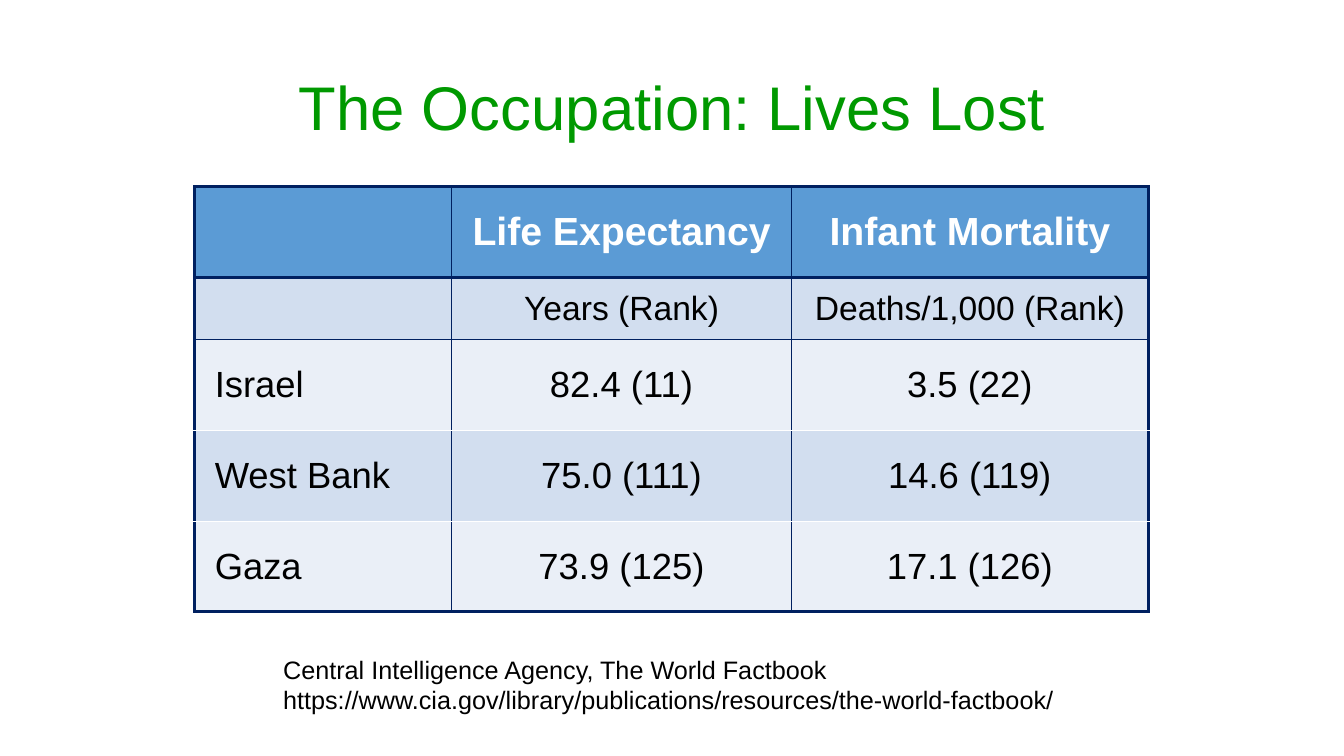
from lxml.etree import SubElement
from pptx import Presentation
from pptx.dml.color import RGBColor
from pptx.enum.text import MSO_ANCHOR as ANCHOR, PP_ALIGN as ALIGN
from pptx.oxml.ns import qn
from pptx.util import Inches, Pt

GREEN = RGBColor(0x00, 0x99, 0x00)
NAVY = RGBColor(0x00, 0x20, 0x60)
BLUE = RGBColor(0x5B, 0x9B, 0xD5)
BAND_DARK = RGBColor(0xD2, 0xDE, 0xEF)
BAND_LIGHT = RGBColor(0xEA, 0xEF, 0xF7)
WHITE = RGBColor(0xFF, 0xFF, 0xFF)
BLACK = RGBColor(0x00, 0x00, 0x00)

ROWS = [
    ("", "Life Expectancy", "Infant Mortality"),
    ("", "Years (Rank)", "Deaths/1,000 (Rank)"),
    ("Israel", "82.4 (11)", "3.5 (22)"),
    ("West Bank", "75.0 (111)", "14.6 (119)"),
    ("Gaza", "73.9 (125)", "17.1 (126)"),
]
COL_WIDTHS = [2.55, 3.37, 3.54]
ROW_HEIGHTS = [0.9, 0.62, 0.9, 0.9, 0.9]
TEXT_SIZES = [28, 24, 26, 26, 26]
ROW_FILLS = [BLUE, BAND_DARK, BAND_LIGHT, BAND_DARK, BAND_LIGHT]
ROW_LINES = [(NAVY, 2.25), (NAVY, 2.25), (NAVY, 1), (WHITE, 1), (WHITE, 1), (NAVY, 2.25)]
COL_LINES = [(NAVY, 2.25), (NAVY, 1), (NAVY, 1), (NAVY, 2.25)]


def style_paragraph(p, size, color, align, bold=False):
    p.alignment = align
    p.font.name = "Arial"
    p.font.size = Pt(size)
    p.font.bold = bold
    p.font.color.rgb = color


def add_text(s, box, lines, size, color, align, anchor, wrap):
    tf = s.shapes.add_textbox(*map(Inches, box)).text_frame
    tf.word_wrap = wrap
    tf.vertical_anchor = anchor
    tf.text = "\n".join(lines)
    for p in tf.paragraphs:
        style_paragraph(p, size, color, align)
    return tf


def set_border(cell, side, color, width):
    ln = SubElement(cell._tc.get_or_add_tcPr(), qn(f"a:ln{side}"), w=str(Pt(width)))
    fill = SubElement(ln, qn("a:solidFill"))
    SubElement(fill, qn("a:srgbClr"), val=str(color))


def fill_cell(cell, row, col):
    borders = {"L": COL_LINES[col], "R": COL_LINES[col + 1],
               "T": ROW_LINES[row], "B": ROW_LINES[row + 1]}
    for side, (color, width) in borders.items():
        set_border(cell, side, color, width)
    cell.fill.solid()
    cell.fill.fore_color.rgb = ROW_FILLS[row]
    cell.vertical_anchor = ANCHOR.MIDDLE
    if col == 0:
        cell.margin_left = Inches(0.2)
    cell.text = ROWS[row][col]
    style_paragraph(cell.text_frame.paragraphs[0], TEXT_SIZES[row],
                    BLACK if row else WHITE,
                    ALIGN.CENTER if col else ALIGN.LEFT, bold=row == 0)


def add_rates_table(s):
    table = s.shapes.add_table(
        len(ROWS), len(COL_WIDTHS), Inches(1.93), Inches(1.85),
        Inches(sum(COL_WIDTHS)), Inches(sum(ROW_HEIGHTS))).table
    for column, width in zip(table.columns, COL_WIDTHS):
        column.width = Inches(width)
    for row, height in enumerate(ROW_HEIGHTS):
        table.rows[row].height = Inches(height)
        for col in range(len(COL_WIDTHS)):
            fill_cell(table.cell(row, col), row, col)


def main():
    prs = Presentation()
    prs.slide_width, prs.slide_height = Inches(13.33), Inches(7.5)
    s = prs.slides.add_slide(prs.slide_layouts[6])
    title = add_text(s, (0.92, 0.41, 11.5, 1.07), ["The Occupation: Lives Lost"],
                     44, GREEN, ALIGN.CENTER, ANCHOR.BOTTOM, True)
    title.paragraphs[0].line_spacing = 0.9
    add_rates_table(s)
    add_text(s, (2.71, 6.44, 7.92, 0.71),
             ["Central Intelligence Agency, The World Factbook",
              "https://www.cia.gov/library/publications/resources/the-world-factbook/"],
             18, BLACK, ALIGN.LEFT, ANCHOR.TOP, False)
    prs.save("out.pptx")


if __name__ == "__main__":
    main()
